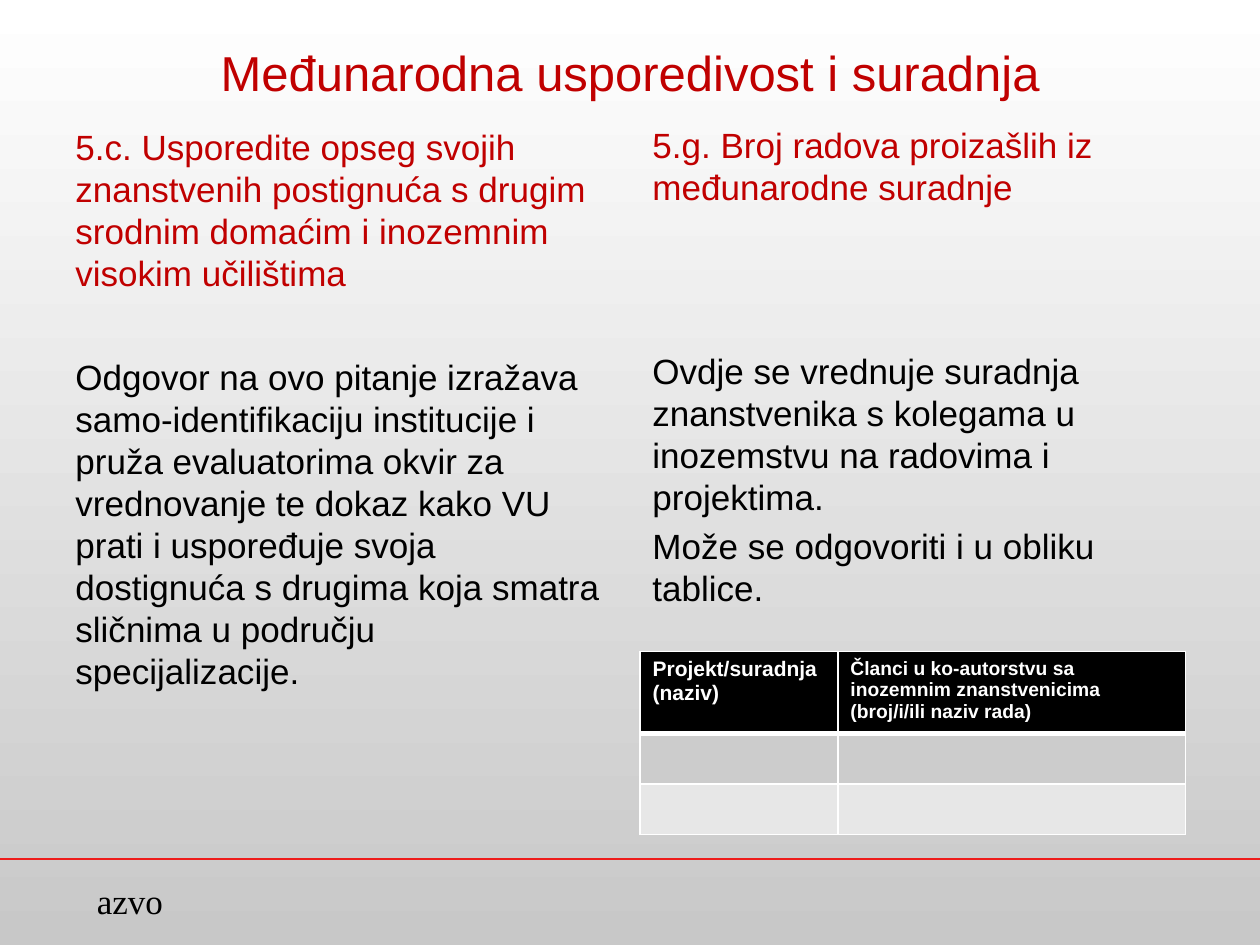
from lxml.etree import SubElement
from pptx import Presentation
from pptx.dml.color import RGBColor
from pptx.enum.text import MSO_ANCHOR, PP_ALIGN
from pptx.oxml.ns import qn
from pptx.util import Inches, Pt

HUES = {"white": "FFFFFF", "base": "C8C8C8", "red": "C00000", "rule": "EE1C1B",
        "black": "000000", "dark": "CCCCCC", "light": "E7E7E7"}

deck = Presentation()
deck.slide_width, deck.slide_height = Inches(10), Inches(7.5)
COL, ROW = deck.slide_width / 100, deck.slide_height / 75
slide = deck.slides.add_slide(deck.slide_layouts[6])


def hue(name):
    return RGBColor.from_string(HUES[name])


def write(frame, lines, size, tint, face="Arial", bold=False, align=PP_ALIGN.LEFT):
    """Fill a text frame, one paragraph a line, with a fifth of the size between."""
    frame.word_wrap = True
    for i, line in enumerate(lines):
        para = frame.paragraphs[0] if i == 0 else frame.add_paragraph()
        para.text = line
        para.alignment = align
        para.space_before = Pt(size / 5 if i else 0)
        look = {"name": face, "size": Pt(size), "bold": bold}
        for key, val in look.items():
            setattr(para.runs[0].font, key, val)
        para.runs[0].font.color.rgb = hue(tint)


# Background, white at the top and grey at the foot
fill = slide.background.fill
fill.gradient()
fill.gradient_angle = 270
for stop, name, spot in zip(fill.gradient_stops, ("white", "base"), (0, 1)):
    stop.color.rgb = hue(name)
    stop.position = spot

# Footer rule
rule = slide.shapes.add_connector(1, 0, int(68.2 * ROW), deck.slide_width, int(68.2 * ROW))
rule.line.color.rgb = hue("rule")
rule.line.width = Pt(1)
SubElement(rule._element.spPr, qn("a:effectLst"))

# Text: column, row, width, height, top inset in rows, anchor, lines, format
TOP, MID, LOW = MSO_ANCHOR.TOP, MSO_ANCHOR.MIDDLE, MSO_ANCHOR.BOTTOM
LEFT, RIGHT, WIDE = 5, 50.8, 44.2
head = {"size": 20, "tint": "red"}
body = {"size": 20, "tint": "black"}
texts = [
    (6.7, 69.3, 8.7, 4.3, 0.5, TOP, ["azvo"], {**body, "face": "Times New Roman"}),
    (LEFT, 3, 90, 5.4, 0.5, MID, ["Međunarodna usporedivost i suradnja"],
     {"size": 28, "tint": "red", "align": PP_ALIGN.CENTER}),
    (LEFT, 9.2, WIDE, 14.6, 0.5, LOW,
     ["5.c. Usporedite opseg svojih znanstvenih postignuća s drugim srodnim "
      "domaćim i inozemnim visokim učilištima"], head),
    (LEFT, 23.8, WIDE, 43.2, 4.4, TOP,
     ["Odgovor na ovo pitanje izražava samo-identifikaciju institucije i pruža "
      "evaluatorima okvir za vrednovanje te dokaz kako VU prati i uspoređuje svoja "
      "dostignuća s drugima koja smatra sličnima u području specijalizacije."], body),
    (RIGHT, 10.7, WIDE, 6.3, 0.5, LOW,
     ["5.g. Broj radova proizašlih iz međunarodne suradnje"], head),
    (RIGHT, 23.3, WIDE, 43.7, 4.4, TOP,
     ["Ovdje se vrednuje suradnja znanstvenika s kolegama u inozemstvu na radovima "
      "i projektima.", "Može se odgovoriti i u obliku tablice."], body),
]
for x, y, w, h, inset, anchor, lines, form in texts:
    box = slide.shapes.add_textbox(int(x * COL), int(y * ROW), int(w * COL), int(h * ROW))
    frame = box.text_frame
    frame.margin_top = int(inset * ROW)
    frame.vertical_anchor = anchor
    write(frame, lines, **form)

# Table of projects and papers
wide, high = (15.7, 27.6), (6.1, 3.8, 3.8)
table = slide.shapes.add_table(3, 2, int(RIGHT * COL), int(51.7 * ROW),
                               int(sum(wide) * COL), int(sum(high) * ROW)).table
for col, w in zip(table.columns, wide):
    col.width = int(w * COL)
for r, (h, shade) in enumerate(zip(high, ("black", "dark", "light"))):
    table.rows[r].height = int(h * ROW)
    for cell in table.rows[r].cells:
        props = cell._tc.get_or_add_tcPr()
        for side in ("lnL", "lnR", "lnT", "lnB"):
            thick = (r, side) in ((0, "lnB"), (1, "lnT"))
            edge = SubElement(props, qn("a:" + side), w=str(Pt(3 if thick else 1)))
            SubElement(SubElement(edge, qn("a:solidFill")), qn("a:srgbClr"), val=HUES["white"])
        cell.fill.solid()
        cell.fill.fore_color.rgb = hue(shade)
heads = [("Projekt/suradnja (naziv)", 12),
         ("Članci u ko-autorstvu sa inozemnim znanstvenicima (broj/i/ili naziv rada)", 11)]
for cell, (label, size) in zip(table.rows[0].cells, heads):
    write(cell.text_frame, [label], size, "white", bold=True)

deck.save("out.pptx")
